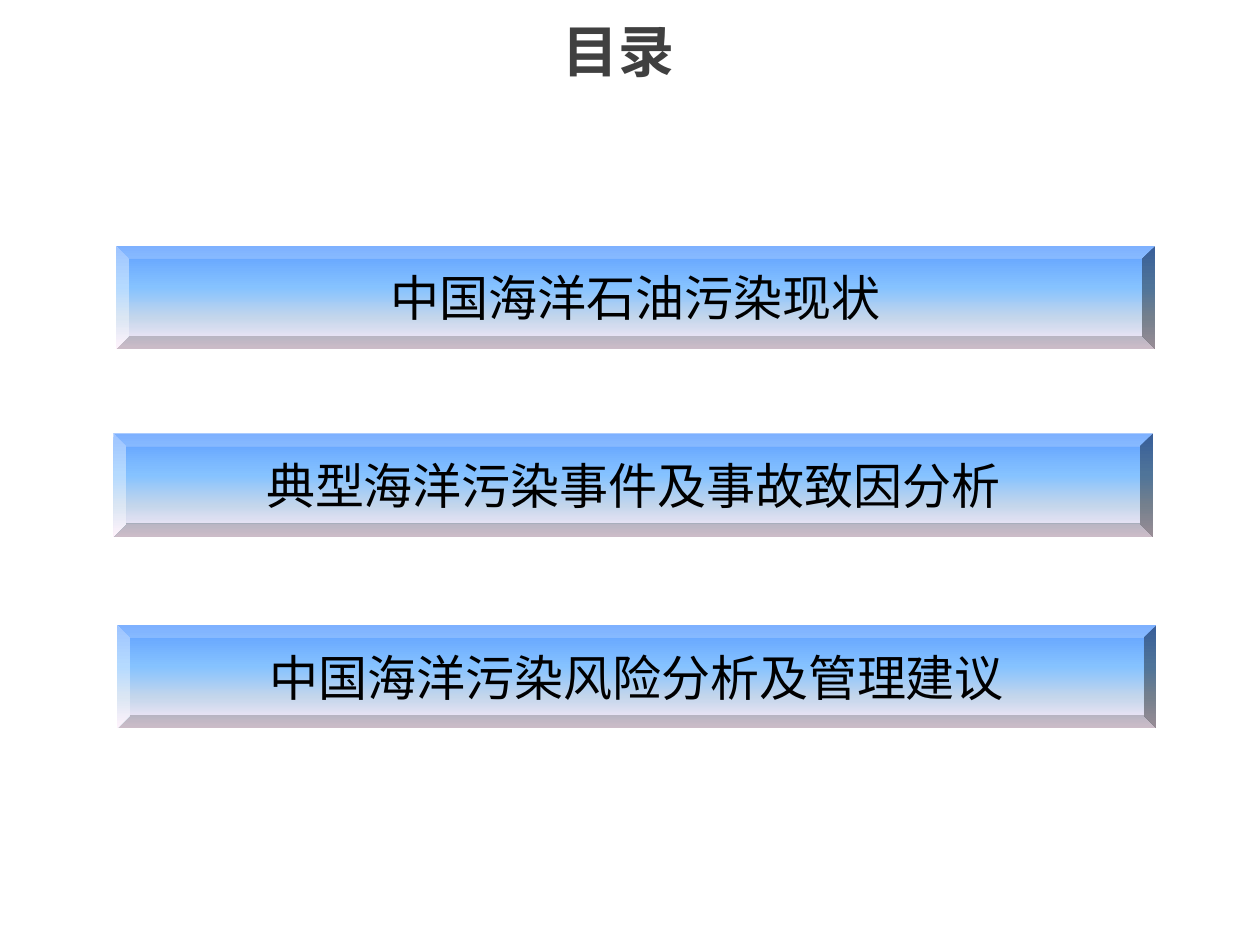
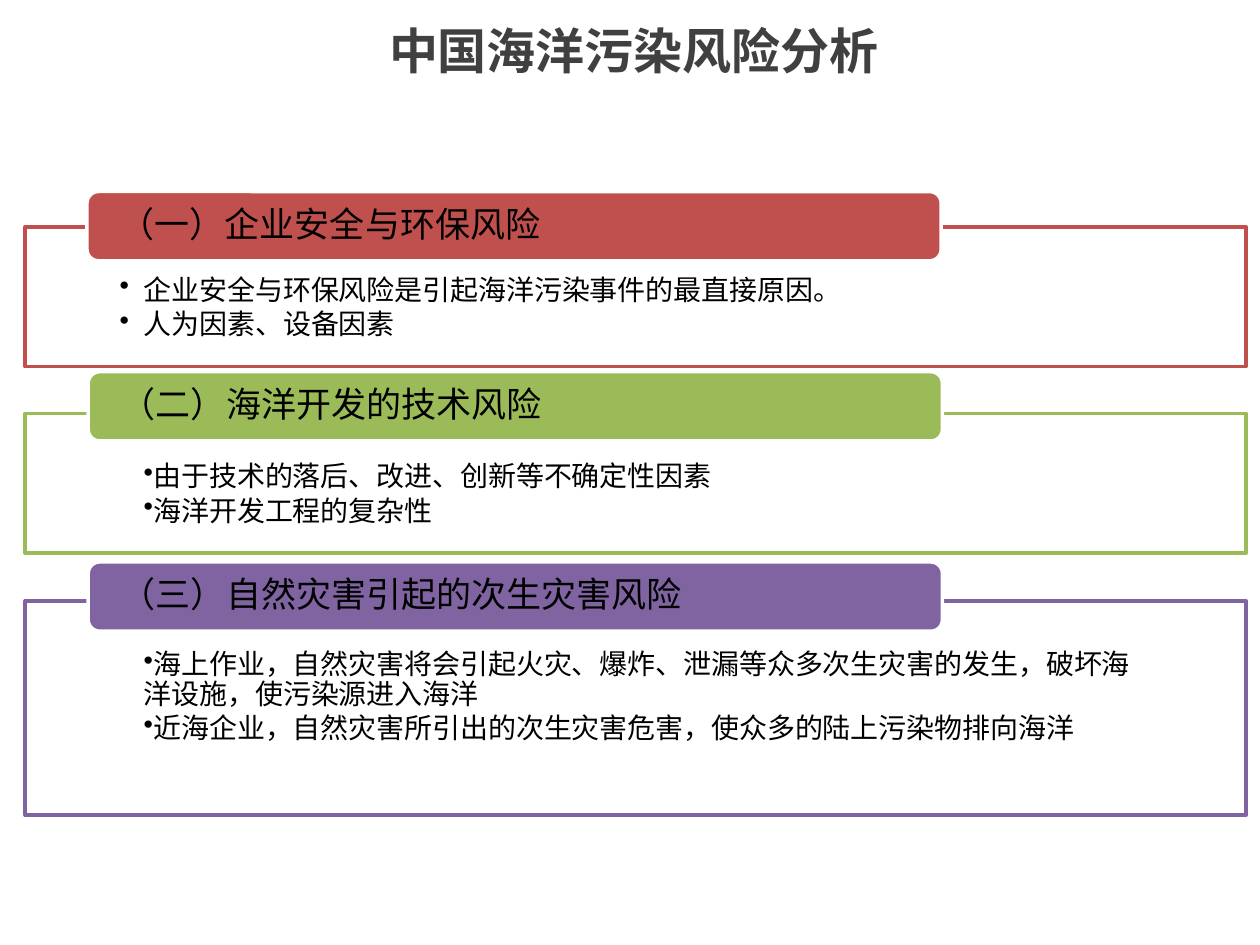
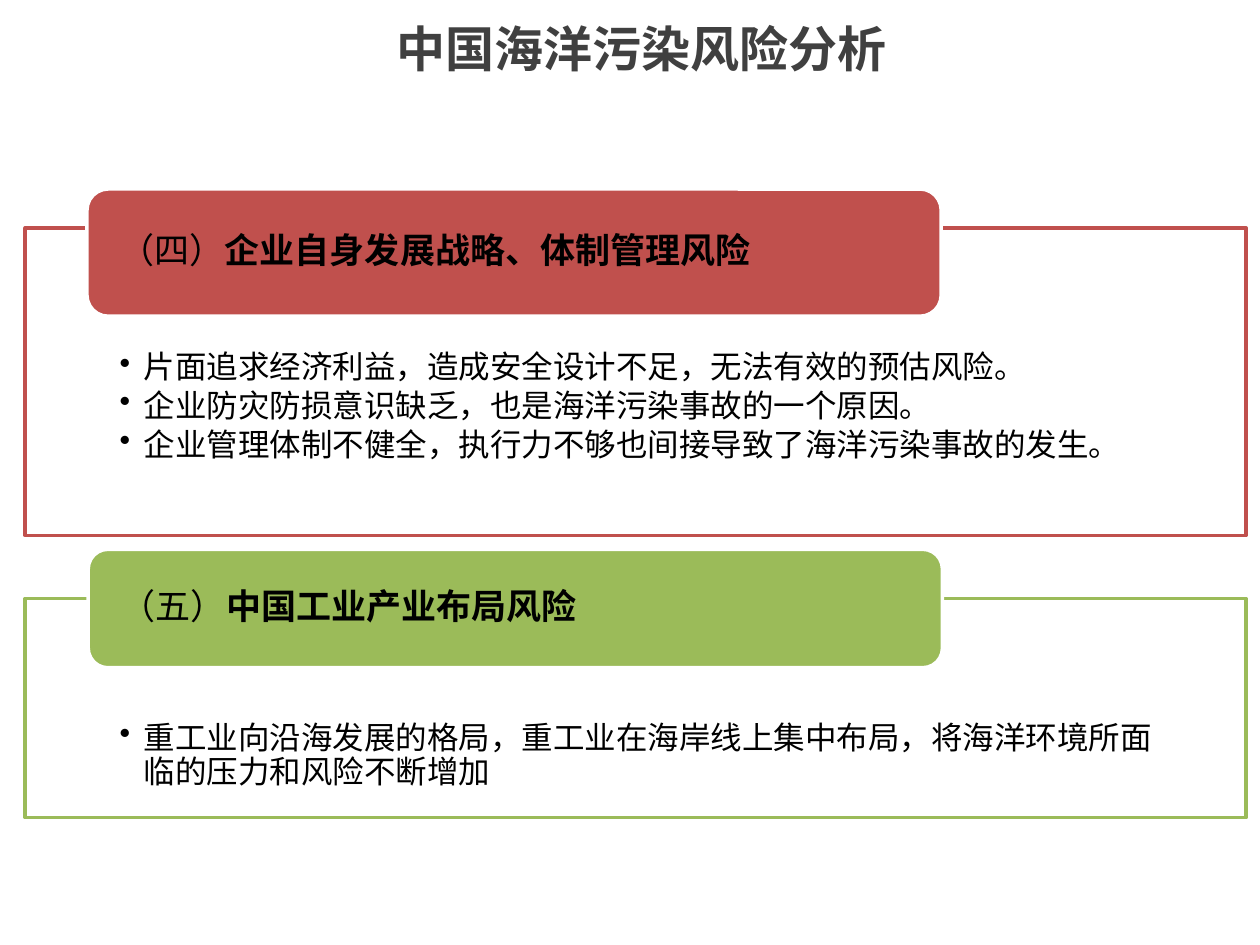
from lxml.etree import SubElement
from pptx import Presentation
from pptx.dml.color import RGBColor
from pptx.enum.shapes import MSO_SHAPE
from pptx.enum.text import MSO_ANCHOR, PP_ALIGN
from pptx.oxml.ns import qn
from pptx.util import Inches, Pt

COLORS = {
    "white": "FFFFFF",
    "title": "404040",
    "text": "000000",
    "red": "C0504D",
    "green": "9BBB59",
    "purple": "8064A2",
}
BAR_GRADIENT = [(0, "5E9EFF"), (40, "85C2FF"), (70, "C4D6EB"), (100, "FFEBFA")]
CJK_FONT = "Noto Sans CJK SC"
BODY_FONT = "Roboto"
PANEL_LEFT, PANEL_WIDTH = 0.2, 9.69
HEADER_WIDTH = 6.78
BULLET_INDENT = 0.19


def rgb(name):
    return RGBColor.from_string(COLORS[name])


def set_margins(frame, left, top, right, bottom):
    margins = {"left": left, "top": top, "right": right, "bottom": bottom}
    for side, value in margins.items():
        setattr(frame, f"margin_{side}", Inches(value))


def add_span(paragraph, text, size, font=CJK_FONT, bold=False, color="text"):
    span = paragraph.add_run()
    span.text = text
    span.font.color.rgb = rgb(color)
    for name, value in {"name": font, "size": Pt(size), "bold": bold}.items():
        setattr(span.font, name, value)
    SubElement(span.font._element, qn("a:ea"), typeface=font)


def format_paragraph(paragraph, **values):
    for name, value in values.items():
        setattr(paragraph, name, value)


def add_bullet(paragraph, hanging):
    properties = paragraph._p.get_or_add_pPr()
    properties.set("marL", str(Inches(BULLET_INDENT)))
    properties.set("indent", str(-Inches(BULLET_INDENT) if hanging else 0))
    SubElement(properties, qn("a:buChar"), char="•")


def add_shape(page, kind, left, top, width, height):
    shape = page.shapes.add_shape(
        kind, Inches(left), Inches(top), Inches(width), Inches(height))
    shape.shadow.inherit = False
    return shape


def paint(shape, fill, line):
    shape.fill.solid()
    shape.fill.fore_color.rgb = rgb(fill)
    shape.line.color.rgb = rgb(line)
    shape.line.width = Pt(2)


def add_page(deck, title, left, top, size):
    page = deck.slides.add_slide(deck.slide_layouts[6])
    box = page.shapes.add_textbox(
        Inches(left), Inches(top), Inches(8), Inches(0.47))
    frame = box.text_frame
    frame.word_wrap = True
    set_margins(frame, 0, 0, 0, 0)
    paragraph = frame.paragraphs[0]
    paragraph.alignment = PP_ALIGN.CENTER
    add_span(paragraph, title, size, bold=True, color="title")
    return page


def add_contents_bar(page, text, left, top):
    bar = add_shape(page, MSO_SHAPE.BEVEL, left, top, 8.25, 0.82)
    bar.line.fill.background()
    bar.fill.gradient()
    bar.fill.gradient_angle = 270
    stops = bar._element.spPr.find(qn("a:gradFill")).find(qn("a:gsLst"))
    stops.clear()
    for percent, color in BAR_GRADIENT:
        stop = SubElement(stops, qn("a:gs"), pos=str(percent * 1000))
        SubElement(stop, qn("a:srgbClr"), val=color)
    frame = bar.text_frame
    frame.word_wrap = False
    paragraph = frame.paragraphs[0]
    paragraph.alignment = PP_ALIGN.CENTER
    add_span(paragraph, text, 28)


def add_panel(page, color, top, height, points, size, margins, hanging):
    """Outlined box of bullets; each point is a list of (text, font) spans."""
    panel = add_shape(
        page, MSO_SHAPE.RECTANGLE, PANEL_LEFT, top, PANEL_WIDTH, height)
    paint(panel, "white", color)
    fill = panel._element.spPr.find(qn("a:solidFill"))
    SubElement(fill[0], qn("a:alpha"), val="90000")
    frame = panel.text_frame
    frame.word_wrap = True
    frame.vertical_anchor = MSO_ANCHOR.TOP
    set_margins(frame, *margins)
    for index, point in enumerate(points):
        paragraph = frame.add_paragraph() if index else frame.paragraphs[0]
        add_bullet(paragraph, hanging)
        format_paragraph(paragraph, level=1, alignment=PP_ALIGN.LEFT,
                         line_spacing=0.9, space_after=Pt(size * 0.15))
        for text, font in point:
            add_span(paragraph, text, size, font)


def add_header(page, color, left, top, height, number, heading, bold):
    header = add_shape(
        page, MSO_SHAPE.ROUNDED_RECTANGLE, left, top, HEADER_WIDTH, height)
    paint(header, color, "white")
    frame = header.text_frame
    frame.word_wrap = True
    frame.vertical_anchor = MSO_ANCHOR.MIDDLE
    # The rounded corners already push the text in by 5 % of the height.
    side = 0.26 - 0.05 * height
    set_margins(frame, side, 0, side, 0)
    paragraph = frame.paragraphs[0]
    format_paragraph(paragraph, alignment=PP_ALIGN.LEFT, line_spacing=0.9)
    add_span(paragraph, number, 20)
    add_span(paragraph, heading, 20, bold=bold)


def body(text):
    return [(text, BODY_FONT)]


def add_contents_page(deck):
    page = add_page(deck, "目录", 0.91, 0.13, 32)
    for text, left, top in [
        ("中国海洋石油污染现状", 0.92, 1.95),
        ("典型海洋污染事件及事故致因分析", 0.9, 3.44),
        ("中国海洋污染风险分析及管理建议", 0.93, 4.96),
    ]:
        add_contents_bar(page, text, left, top)


def add_risk_page(deck, title_at, sections, size, margins, bold):
    page = add_page(deck, "中国海洋污染风险分析", *title_at, 28)
    for color, panel, header, number, heading, hanging, points in sections:
        add_panel(page, color, *panel, points, size, margins, hanging)
        add_header(page, color, *header, number, heading, bold)


def main():
    deck = Presentation()
    deck.slide_width, deck.slide_height = Inches(10), Inches(7.5)
    add_contents_page(deck)
    # Section: colour, panel (top, height), header (left, top, height),
    # number, heading, hanging bullets, points.
    add_risk_page(deck, (1.03, 0.16), [
        ("red", (1.8, 1.11), (0.69, 1.52, 0.55),
         "（一）", "企业安全与环保风险", True,
         [body("企业安全与环保风险是引起海洋污染事件的最直接原因。"),
          body("人为因素、设备因素")]),
        ("green", (3.28, 1.11), (0.7, 2.95, 0.55),
         "（二）", "海洋开发的技术风险", False,
         [body("由于技术的落后、改进、创新等不确定性因素"),
          body("海洋开发工程的复杂性")]),
        ("purple", (4.77, 1.7), (0.7, 4.46, 0.55),
         "（三）", "自然灾害引起的次生灾害风险", False,
         [body("海上作业，自然灾害将会引起火灾、爆炸、泄漏等众多次生灾害的发生，"
               "破坏海洋设施，使污染源进入海洋"),
          body("近海企业，自然灾害所引出的次生灾害危害，"
               "使众多的陆上污染物排向海洋")]),
    ], size=16, margins=(0.75, 0.39, 0.75, 0.12), bold=False)
    add_risk_page(deck, (1.09, 0.15), [
        ("red", (1.81, 2.44), (0.69, 1.5, 1.01),
         "（四）", "企业自身发展战略、体制管理风险", True,
         [body("片面追求经济利益，造成安全设计不足，无法有效的预估风险。"),
          body("企业防灾防损意识缺乏，也是海洋污染事故的一个原因。"),
          body("企业管理体制不健全，执行力不够也间接导致了海洋污染事故的发生")
          + [("。", CJK_FONT)]]),
        ("green", (4.75, 1.74), (0.7, 4.36, 0.94),
         "（五）", "中国工业产业布局风险", True,
         [body("重工业向沿海发展的格局，重工业在海岸线上集中布局，"
               "将海洋环境所面临的压力和风险不断增加")]),
    ], size=18, margins=(0.75, 0.98, 0.75, 0.14), bold=True)
    deck.save("out.pptx")


if __name__ == "__main__":
    main()
